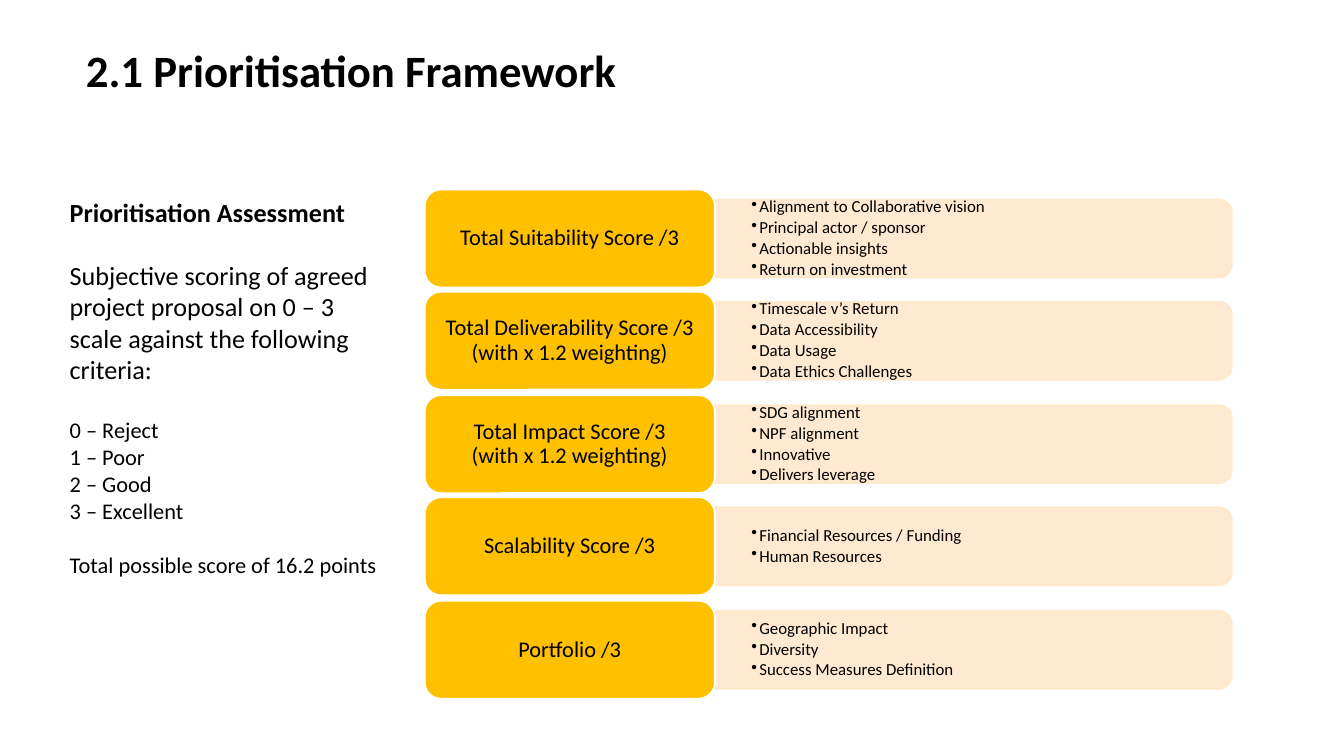
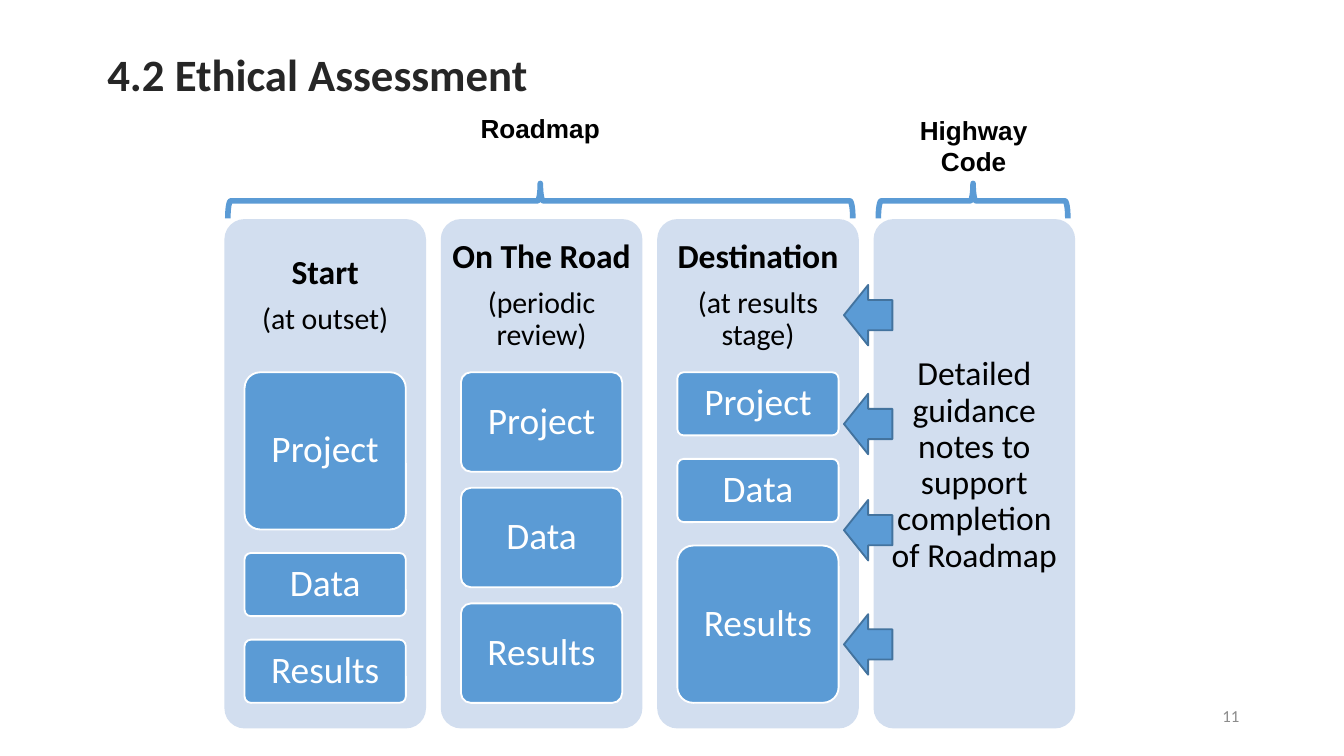
"""Build two slides: a prioritisation framework and an ethical assessment."""
from dataclasses import dataclass

import lxml.etree
import pptx
import pptx.dml.color
import pptx.enum.shapes
import pptx.enum.text
import pptx.oxml.ns
import pptx.util


@dataclass(frozen=True)
class Theme:
    font: str = "Calibri"
    label: str = "Arial"
    black: str = "000000"
    dark: str = "262626"
    grey: str = "8C8C8C"
    white: str = "FFFFFF"
    gold: str = "FFC000"
    cream: str = "FFE8CC"
    pale: str = "D2DEEF"
    blue: str = "5B9BD5"
    edge: str = "43739E"
    title: int = 24
    block: int = 20
    head: int = 18
    sub: int = 16
    lead: int = 14
    body: int = 12
    small: int = 9


T = Theme()
PX = 9144
KIND = pptx.enum.shapes.MSO_SHAPE
ALIGN = pptx.enum.text.PP_ALIGN
ANCHOR = pptx.enum.text.MSO_ANCHOR
RGB = pptx.dml.color.RGBColor.from_string
Pt = pptx.util.Pt
qn = pptx.oxml.ns.qn


def draw(slide, kind, box, fill=None, line=None, width=1, adj=None, turn=0):
    """Add a preset shape with flat fill and line."""
    shape = slide.shapes.add_shape(kind, *[int(n * PX) for n in box])
    shape.shadow.inherit = False
    shape.rotation = turn
    if adj is not None:
        shape.adjustments[0] = adj
    if fill:
        shape.fill.solid()
        shape.fill.fore_color.rgb = RGB(fill)
    else:
        shape.fill.background()
    if line:
        shape.line.color.rgb = RGB(line)
        shape.line.width = Pt(width)
    else:
        shape.line.fill.background()
    return shape


def write(shape, paras, color=T.black, font=T.font, align=ALIGN.LEFT, mid=True,
          inset=(10, 5), space=0.9, after=0, bullet=False):
    """Fill a shape with (text, size, bold, space before) paragraphs."""
    frame = shape.text_frame
    frame.word_wrap = True
    frame.vertical_anchor = ANCHOR.MIDDLE if mid else ANCHOR.TOP
    frame.margin_left = frame.margin_right = inset[0] * PX
    frame.margin_top = frame.margin_bottom = inset[1] * PX
    for i, (text, size, bold, before) in enumerate(paras):
        para = frame.add_paragraph() if i else frame.paragraphs[0]
        if bullet:
            para.level = 1
            props = para._p.get_or_add_pPr()
            props.set("marL", str(6 * PX))
            props.set("indent", str(-6 * PX))
            lxml.etree.SubElement(props, qn("a:buChar")).set("char", "•")
        para.alignment = align
        para.line_spacing = space
        if before:
            para.space_before = Pt(before)
        if after and i < len(paras) - 1:
            para.space_after = Pt(after)
        for j, part in enumerate(text.split("\n")):
            if j:
                para.add_line_break()
            run = para.add_run()
            run.text = part
            run.font.name = font
            run.font.size = Pt(size)
            run.font.bold = bold
            run.font.color.rgb = RGB(color)


deck = pptx.Presentation()
deck.slide_width = 1000 * PX
deck.slide_height = deck.slide_width * 9 // 16

pages = []
for text, left, top, color in [
    ("2.1 Prioritisation Framework", 54, 0, T.black),
    ("4.2 Ethical Assessment", 70, 3, T.dark),
]:
    page = deck.slides.add_slide(deck.slide_layouts[6])
    title = page.shapes.add_textbox(left * PX, top * PX, 862 * PX, 109 * PX)
    write(title, [(text, T.title, True, 0)], color)
    pages.append(page)
frame, ethics = pages

scores = [
    ("Total Suitability Score /3",
     ["Alignment to Collaborative vision", "Principal actor / sponsor",
      "Actionable insights", "Return on investment"]),
    ("Total Deliverability Score /3 (with x 1.2 weighting)",
     ["Timescale v’s Return", "Data Accessibility", "Data Usage",
      "Data Ethics Challenges"]),
    ("Total Impact Score /3\n(with x 1.2 weighting)",
     ["SDG alignment", "NPF alignment", "Innovative", "Delivers leverage"]),
    ("Scalability Score /3",
     ["Financial Resources / Funding", "Human Resources"]),
    ("Portfolio /3",
     ["Geographic Impact", "Diversity", "Success Measures Definition"]),
]
for row, (score, points) in enumerate(scores):
    top = 141 + row * 153 // 2
    panel = draw(frame, KIND.ROUND_2_SAME_RECTANGLE, (695, top - 156, 58, 385),
                 T.cream, T.cream, turn=90)
    for tint in panel._element.spPr.iter(qn("a:srgbClr")):
        lxml.etree.SubElement(tint, qn("a:alpha")).set("val", "90000")
    notes = frame.shapes.add_textbox(532 * PX, (top + 10) * PX, 382 * PX, 53 * PX)
    write(notes, [(point, T.small, False, 0) for point in points],
          inset=(27, 0), after=1.4, bullet=True)
    card = draw(frame, KIND.ROUNDED_RECTANGLE, (316, top, 216, 73), T.gold, T.white)
    write(card, [(score, T.body, False, 0)], align=ALIGN.CENTER, inset=(8, 6))

guide = frame.shapes.add_textbox(42 * PX, 141 * PX, 255 * PX, 296 * PX)
write(guide, [
    ("Prioritisation Assessment", T.lead, True, 0),
    ("Subjective scoring of agreed project proposal on 0 – 3 scale against "
     "the following criteria:", T.lead, False, 17),
    ("0 – Reject", T.body, False, 17),
    ("1 – Poor", T.body, False, 0),
    ("2 – Good", T.body, False, 0),
    ("3 – Excellent", T.body, False, 0),
    ("Total possible score of 16.2 points", T.body, False, 14.5),
], mid=False, space=1.0)

number = ethics.shapes.add_textbox(707 * PX, 518 * PX, 225 * PX, 30 * PX)
write(number, [("11", T.small, False, 0)], T.grey, align=ALIGN.RIGHT, space=1.0)

stages = [
    ([("Start", T.head, True, 0), ("(at outset)", T.sub, False, 0)],
     114, (117, 47, 47)),
    ([("On The Road", T.head, True, 0), ("(periodic review)", T.sub, False, 0)],
     114, (74, 74, 74)),
    ([("Destination", T.head, True, 0), ("(at results stage)", T.sub, False, 0)],
     114, (47, 47, 117)),
    ([("Detailed guidance notes to support completion of Roadmap",
       T.head, False, 0)], 367, ()),
]
for col, (heading, height, sizes) in enumerate(stages):
    left = 167 + 161 * col
    draw(ethics, KIND.ROUNDED_RECTANGLE, (left, 163, 150, 379), T.pale, adj=0.1)
    head = ethics.shapes.add_textbox(left * PX, 163 * PX, 150 * PX, height * PX)
    write(head, heading, align=ALIGN.CENTER, inset=(7, 7), after=6.3)
    top = 277
    gap = (246 - sum(sizes)) / 2
    for name, tall in zip(("Project", "Data", "Results"), sizes):
        block = draw(ethics, KIND.ROUNDED_RECTANGLE, (left + 15, top, 120, tall),
                     T.blue, T.white, adj=0.1)
        write(block, [(name, T.block, False, 0)], T.white, align=ALIGN.CENTER,
              inset=(7, 5))
        top += tall + gap

for text, brace, box in [
    ("Roadmap", (389, -83, 26, 465), (334, 79, 136, 35)),
    ("Highway Code", (711, 79, 26, 141), (651, 80, 147, 57)),
]:
    draw(ethics, KIND.LEFT_BRACE, brace, line=T.blue, width=3, turn=90)
    label = ethics.shapes.add_textbox(*[n * PX for n in box])
    write(label, [(text, T.lead, True, 0)], font=T.label, align=ALIGN.CENTER,
          mid=False, space=1.0)

for top in (212, 293, 372, 457):
    draw(ethics, KIND.LEFT_ARROW, (628, top, 36, 45), T.blue, T.edge)

deck.save("out.pptx")
